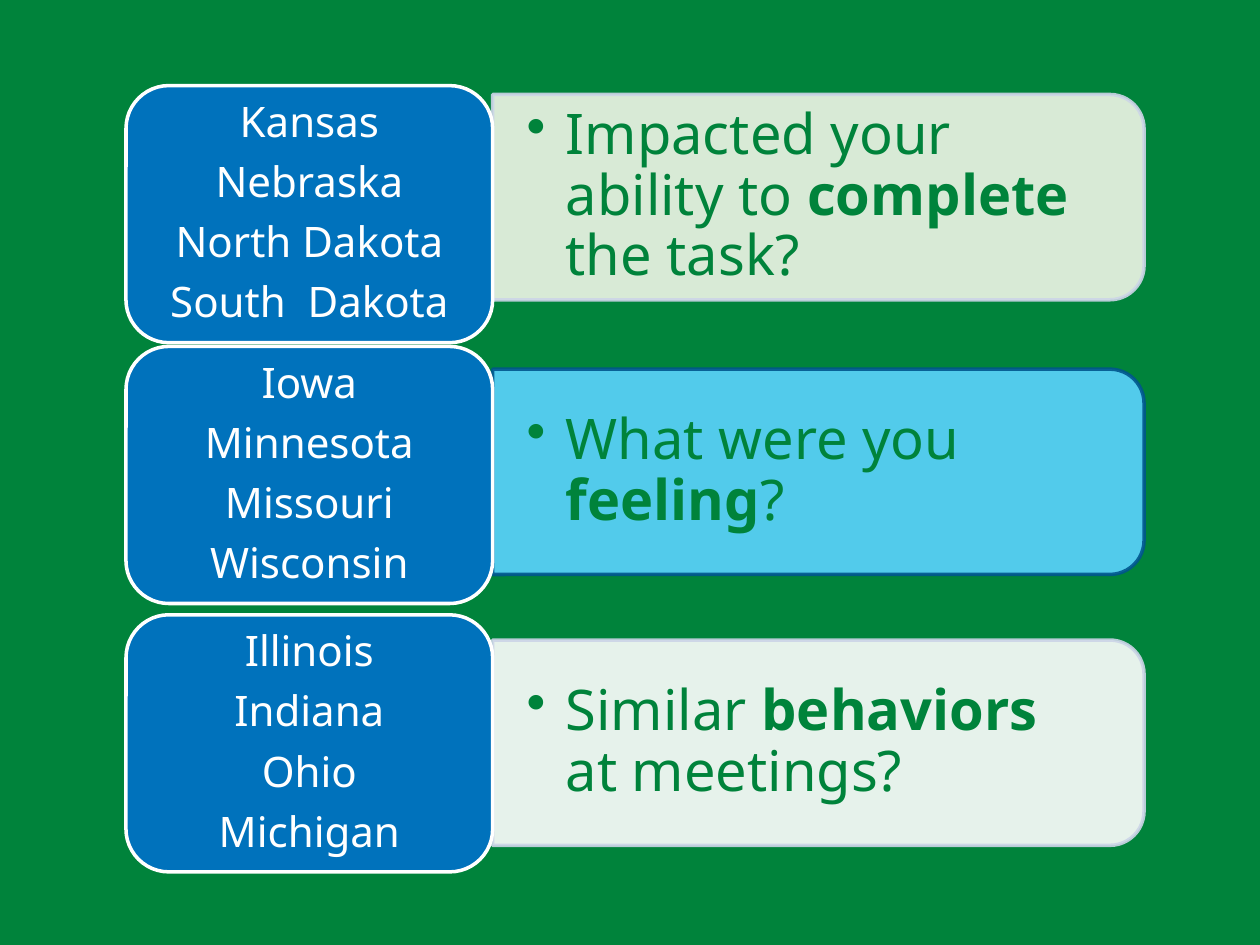
from lxml import etree
from pptx import Presentation
from pptx.dml.color import RGBColor
from pptx.enum.shapes import MSO_SHAPE
from pptx.enum.text import MSO_ANCHOR, PP_ALIGN
from pptx.oxml.ns import qn
from pptx.util import Inches, Pt

ROUNDED = MSO_SHAPE.ROUNDED_RECTANGLE
ROUNDED_SIDE = MSO_SHAPE.ROUND_2_SAME_RECTANGLE
MIDDLE = MSO_ANCHOR.MIDDLE
LEFT, CENTER = PP_ALIGN.LEFT, PP_ALIGN.CENTER

FONT = "Noto Sans"
COLORS = {
    "green": "00833B",
    "blue": "0072BC",
    "dark_blue": "00568D",
    "sky": "5CD3FF",
    "pale_green": "F0F6E7",
    "pale_blue": "CCD5E7",
    "white": "FFFFFF",
}

LABEL_LEFT, LABEL_WIDTH, LABEL_HEIGHT = 1, 2.91, 2.04
LABEL_PADDING = 0.1
PANEL_LEFT = LABEL_LEFT + LABEL_WIDTH
PANEL_WIDTH, PANEL_HEIGHT = 5.17, 1.63
QUESTION_WIDTH, QUESTION_HEIGHT = 5.09, 1.47
BULLET_INDENT = 0.31

ROWS = [
    {
        "label_top": 0.68,
        "panel_top": 0.75,
        "fill": "pale_green",
        "line": "pale_blue",
        "states": ["Kansas", "Nebraska", "North Dakota", "South  Dakota"],
        "question": [("Impacted your ability to", False), (" complete ", True), ("the task?", False)],
    },
    {
        "label_top": 2.75,
        "panel_top": 2.93,
        "fill": "sky",
        "line": "dark_blue",
        "states": ["Iowa", "Minnesota", "Missouri", "Wisconsin"],
        "question": [("What were you ", False), ("feeling", True), ("?", False)],
    },
    {
        "label_top": 4.88,
        "panel_top": 5.08,
        "fill": "white",
        "line": "pale_blue",
        "states": ["Illinois", "Indiana", "Ohio", "Michigan"],
        "question": [("Similar ", False), ("behaviors", True), (" at meetings?", False)],
    },
]


def color(name):
    return RGBColor.from_string(COLORS[name])


def add_box(slide, kind, left, top, width, height, fill, line, rotation=0, opacity=100):
    shape = slide.shapes.add_shape(kind, Inches(left), Inches(top), Inches(width), Inches(height))
    shape.rotation = rotation
    shape.shadow.inherit = False
    shape.fill.solid()
    shape.fill.fore_color.rgb = color(fill)
    shape.line.color.rgb = color(line)
    shape.line.width = Pt(2)
    if opacity < 100:
        for fill_color in shape._element.spPr.iter(qn("a:srgbClr")):
            etree.SubElement(fill_color, qn("a:alpha"), val=str(opacity * 1000))
    return shape


def add_bullet(paragraph):
    paragraph.level = 1
    properties = paragraph._p.get_or_add_pPr()
    properties.set("marL", str(Inches(BULLET_INDENT)))
    properties.set("indent", str(-Inches(BULLET_INDENT)))
    etree.SubElement(properties, qn("a:buChar"), char="•")


def add_text(slide, paragraphs, left, top, width, height, *, size, font_color,
             align=LEFT, space_after=0, insets=(0.1, 0.05), bullet=False):
    box = slide.shapes.add_textbox(Inches(left), Inches(top), Inches(width), Inches(height))
    frame = box.text_frame
    frame.word_wrap = True
    frame.vertical_anchor = MIDDLE
    frame.margin_left = frame.margin_right = Inches(insets[0])
    frame.margin_top = frame.margin_bottom = Inches(insets[1])
    for index, runs in enumerate(paragraphs):
        paragraph = frame.add_paragraph() if index else frame.paragraphs[0]
        paragraph.alignment = align
        paragraph.line_spacing = 0.9
        paragraph.space_after = Pt(size * space_after)
        if bullet:
            add_bullet(paragraph)
        for text, bold in runs:
            run = paragraph.add_run()
            run.text = text
            run.font.name = FONT
            run.font.size = Pt(size)
            run.font.bold = bold
            run.font.color.rgb = color(font_color)
    return box


def add_question(slide, row):
    center = row["panel_top"] + PANEL_HEIGHT / 2
    add_box(slide, ROUNDED_SIDE, PANEL_LEFT + (PANEL_WIDTH - PANEL_HEIGHT) / 2,
            center - PANEL_WIDTH / 2, PANEL_HEIGHT, PANEL_WIDTH,
            row["fill"], row["line"], rotation=90, opacity=90)
    add_text(slide, [row["question"]], PANEL_LEFT, center - QUESTION_HEIGHT / 2,
             QUESTION_WIDTH, QUESTION_HEIGHT, size=32, font_color="green",
             space_after=0.15, insets=(0.27, 0.14), bullet=True)


def add_states(slide, row):
    top = row["label_top"]
    add_box(slide, ROUNDED, LABEL_LEFT, top, LABEL_WIDTH, LABEL_HEIGHT, "blue", "white")
    add_text(slide, [[(state, False)] for state in row["states"]],
             LABEL_LEFT + LABEL_PADDING, top + LABEL_PADDING,
             LABEL_WIDTH - 2 * LABEL_PADDING, LABEL_HEIGHT - 2 * LABEL_PADDING,
             size=24, font_color="white", align=CENTER, space_after=0.35)


def main():
    presentation = Presentation()
    presentation.slide_width = Inches(10)
    presentation.slide_height = Inches(7.5)
    slide = presentation.slides.add_slide(presentation.slide_layouts[6])
    slide.background.fill.solid()
    slide.background.fill.fore_color.rgb = color("green")
    for row in ROWS:
        add_question(slide, row)
        add_states(slide, row)
    presentation.save("out.pptx")


if __name__ == "__main__":
    main()
